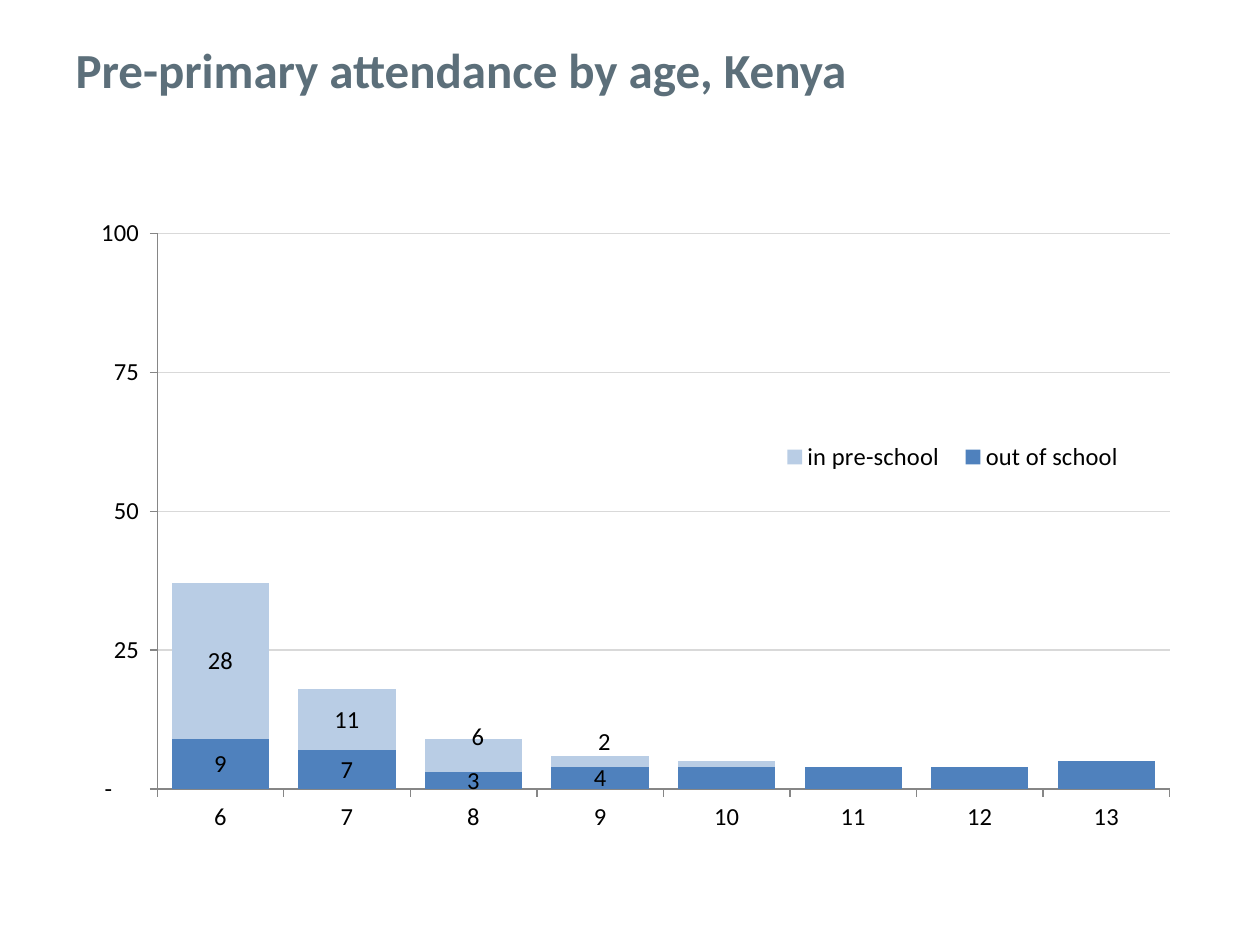
from pptx import Presentation
from pptx.chart.data import CategoryChartData
from pptx.dml.color import RGBColor
from pptx.enum.chart import XL_CHART_TYPE as ChartType, XL_LEGEND_POSITION as LegendPos, XL_TICK_MARK as Tick
from pptx.enum.text import MSO_ANCHOR as Anchor, PP_ALIGN as Align
from pptx.oxml import parse_xml
from pptx.oxml.ns import nsdecls
from pptx.util import Inches, Pt

SLATE = RGBColor(0x5C, 0x6F, 0x7A)
BLUE = RGBColor(0x4F, 0x81, 0xBD)
PALE_BLUE = RGBColor(0xB9, 0xCD, 0xE5)
GRID = RGBColor(0xD9, 0xD9, 0xD9)
AXIS = RGBColor(0x86, 0x86, 0x86)
BLACK = RGBColor(0, 0, 0)
FONT = "Calibri"

TITLE = "Pre-primary attendance by age, Kenya"
AGES = ["6", "7", "8", "9", "10", "11", "12", "13"]
SERIES = [
    ("out of school", [9, 7, 3, 4, 4, 4, 4, 5], BLUE, []),
    ("in pre-school", [28, 11, 6, 2, 1, 0, 0, 0], PALE_BLUE, [2, 3]),
]
UNLABELLED = range(4, 8)
AXIS_FORMAT = '_(* #,##0_);_(* \\(#,##0\\);_(* "-"??_);_('
PLOT_BOX = dict(x=0.07, y=0.04, w=0.91, h=0.87)
LEGEND_BOX = dict(x=0.62, y=0.35, w=0.33, h=0.08)
LABEL_SHIFT = dict(x=0.004, y=-0.03)


def layout(box, target="", absolute=True):
    modes = '<c:xMode val="edge"/><c:yMode val="edge"/>' if absolute else ""
    sizes = "".join(f'<c:{key} val="{value}"/>' for key, value in box.items())
    return parse_xml(f'<c:layout {nsdecls("c")}><c:manualLayout>{target}{modes}{sizes}'
                     '</c:manualLayout></c:layout>')


def place(element, new, after):
    for old in element.findall(new.tag):
        element.remove(old)
    element.insert(after, new)


def style_font(font, size=14, color=BLACK, bold=False):
    font.name, font.size, font.bold = FONT, Pt(size), bold
    font.color.rgb = color


def style_axis(axis):
    axis.major_tick_mark, axis.minor_tick_mark = Tick.OUTSIDE, Tick.NONE
    axis.format.line.color.rgb = AXIS
    axis.format.line.width = Pt(0.75)
    style_font(axis.tick_labels.font)


def style_series(series, color, shifted):
    series.format.fill.solid()
    series.format.fill.fore_color.rgb = color
    labels = series.data_labels
    labels.show_value = True
    labels.number_format, labels.number_format_is_linked = "0", False
    style_font(labels.font)
    for i in reversed(UNLABELLED):
        labels._element.insert(0, parse_xml(
            f'<c:dLbl {nsdecls("c")}><c:idx val="{i}"/><c:delete val="1"/></c:dLbl>'))
    for i in shifted:
        label = series.points[i].data_label
        style_font(label.font)
        dlbl = labels._element.xpath(f'c:dLbl[c:idx/@val="{i}"]')[0]
        place(dlbl, layout(LABEL_SHIFT, absolute=False), 1)


def add_title(slide):
    s = slide.shapes.title
    s.left, s.top, s.width, s.height = Inches(0.5), 0, Inches(8.49), Inches(1.09)
    tf = s.text_frame
    tf.vertical_anchor = Anchor.MIDDLE
    p = tf.paragraphs[0]
    p.alignment = Align.LEFT
    r = p.add_run()
    r.text = TITLE
    style_font(r.font, 28, SLATE, True)


def add_attendance_chart(slide):
    data = CategoryChartData()
    data.categories = AGES
    for name, values, *_ in SERIES:
        data.add_series(name, values)
    chart = slide.shapes.add_chart(ChartType.COLUMN_STACKED, Inches(0.63), Inches(1.65),
                                   Inches(8.83), Inches(5.07), data).chart
    chart.has_title = False
    style_font(chart.font, 7)

    plot = chart.plots[0]
    plot.gap_width, plot.overlap, plot.vary_by_categories = 30, 100, False
    for series, (_, _, color, shifted) in zip(plot.series, SERIES):
        style_series(series, color, shifted)

    style_axis(chart.category_axis)
    axis = chart.value_axis
    style_axis(axis)
    axis.minimum_scale, axis.maximum_scale, axis.major_unit = 0, 100, 25
    axis.tick_labels.number_format = AXIS_FORMAT
    axis.tick_labels.number_format_is_linked = False
    axis.has_major_gridlines = True
    axis.major_gridlines.format.line.color.rgb = GRID
    axis.major_gridlines.format.line.width = Pt(0.75)

    chart.has_legend = True
    legend = chart.legend
    legend.position, legend.include_in_layout = LegendPos.RIGHT, True
    style_font(legend.font)
    place(legend._element, layout(LEGEND_BOX), 1)
    plot_area = chart._chartSpace.xpath("c:chart/c:plotArea")[0]
    place(plot_area, layout(PLOT_BOX, '<c:layoutTarget val="inner"/>'), 0)


prs = Presentation()
prs.slide_width, prs.slide_height = Inches(10), Inches(7.5)
slide = prs.slides.add_slide(prs.slide_layouts[5])
add_title(slide)
add_attendance_chart(slide)
prs.save("out.pptx")
